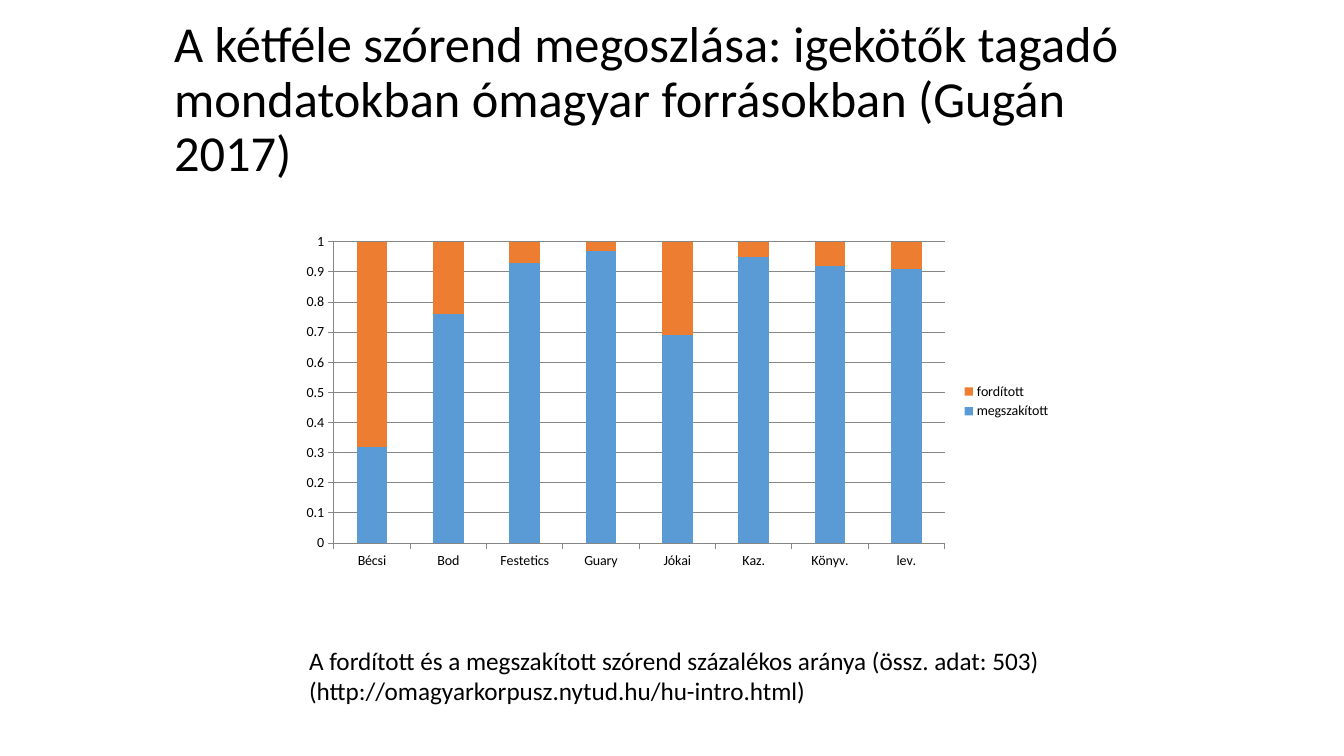
"""Build a slide with a stacked column chart of word order shares in Old Hungarian sources."""
import pptx
import pptx.chart.data
import pptx.dml.color
import pptx.enum.chart
import pptx.enum.text
import pptx.util
from pptx.util import Cm

COLORS = {"text": "000000", "line": "868686", "megszakított": "5B9BD5", "fordított": "ED7D31"}
FONT = "Calibri"
SHARES = {
    "Bécsi": (0.32, 0.68),
    "Bod": (0.76, 0.24),
    "Festetics": (0.93, 0.07),
    "Guary": (0.97, 0.03),
    "Jókai": (0.69, 0.31),
    "Kaz.": (0.95, 0.05),
    "Könyv.": (0.92, 0.08),
    "lev.": (0.91, 0.09),
}


def rgb(name):
    """Return the named colour."""
    return pptx.dml.color.RGBColor.from_string(COLORS[name])


def set_attrs(obj, fmt):
    """Set each attribute of obj from a dict."""
    for name, value in fmt.items():
        setattr(obj, name, value)


def set_font(font, size):
    """Apply the slide font in the text colour."""
    set_attrs(font, {"name": FONT, "size": pptx.util.Pt(size)})
    font.color.rgb = rgb("text")


def add_text(s, box, lines, size, frame_fmt, para_fmt):
    """Add a wrapped text box with one paragraph per line."""
    tf = s.shapes.add_textbox(*map(Cm, box)).text_frame
    set_attrs(tf, {"word_wrap": True, **frame_fmt})
    for i, line in enumerate(lines):
        p = tf.add_paragraph() if i else tf.paragraphs[0]
        set_attrs(p, para_fmt)
        r = p.add_run()
        r.text = line
        set_font(r.font, size)


def add_share_chart(s, box):
    """Add the stacked column chart with its axes and legend."""
    data = pptx.chart.data.CategoryChartData()
    data.categories = list(SHARES)
    for name, values in zip(("megszakított", "fordított"), zip(*SHARES.values())):
        data.add_series(name, values)
    kind = pptx.enum.chart.XL_CHART_TYPE.COLUMN_STACKED
    chart = s.shapes.add_chart(kind, *map(Cm, box), data).chart
    set_attrs(chart, {"has_title": False, "has_legend": True})
    set_font(chart.font, 10)
    position = pptx.enum.chart.XL_LEGEND_POSITION.RIGHT
    set_attrs(chart.legend, {"position": position, "include_in_layout": False})

    plot = chart.plots[0]
    set_attrs(plot, {"gap_width": 150, "overlap": 100, "vary_by_categories": False})
    for series in plot.series:
        series.format.fill.solid()
        series.format.fill.fore_color.rgb = rgb(series.name)

    outside = pptx.enum.chart.XL_TICK_MARK.OUTSIDE
    val = chart.value_axis
    set_attrs(val, {"minimum_scale": 0, "maximum_scale": 1, "major_unit": 0.1,
                    "has_major_gridlines": True})
    set_attrs(val.tick_labels, {"number_format": "General", "number_format_is_linked": False})
    for axis in (chart.category_axis, val):
        axis.major_tick_mark = outside
    for part in (chart.category_axis, val, val.major_gridlines):
        part.format.line.color.rgb = rgb("line")
        part.format.line.width = pptx.util.Pt(0.75)


def main():
    """Build and save the slide."""
    prs = pptx.Presentation()
    set_attrs(prs, {"slide_width": Cm(33.87), "slide_height": Cm(19.05)})
    s = prs.slides.add_slide(prs.slide_layouts[6])
    add_text(s, (4.14, 0.76, 26.11, 3.56),
             ["A kétféle szórend megoszlása: igekötők tagadó mondatokban "
              "ómagyar forrásokban (Gugán 2017)"],
             36, {"vertical_anchor": pptx.enum.text.MSO_ANCHOR.MIDDLE}, {"line_spacing": 0.9})
    add_share_chart(s, (7.34, 5.72, 19.4, 8.79))
    add_text(s, (7.54, 16.13, 20.6, 1.8),
             ["A fordított és a megszakított szórend százalékos aránya (össz. adat: 503)",
              "(http://omagyarkorpusz.nytud.hu/hu-intro.html)"],
             18, {"auto_size": pptx.enum.text.MSO_AUTO_SIZE.SHAPE_TO_FIT_TEXT}, {})
    prs.save("out.pptx")


if __name__ == "__main__":
    main()
